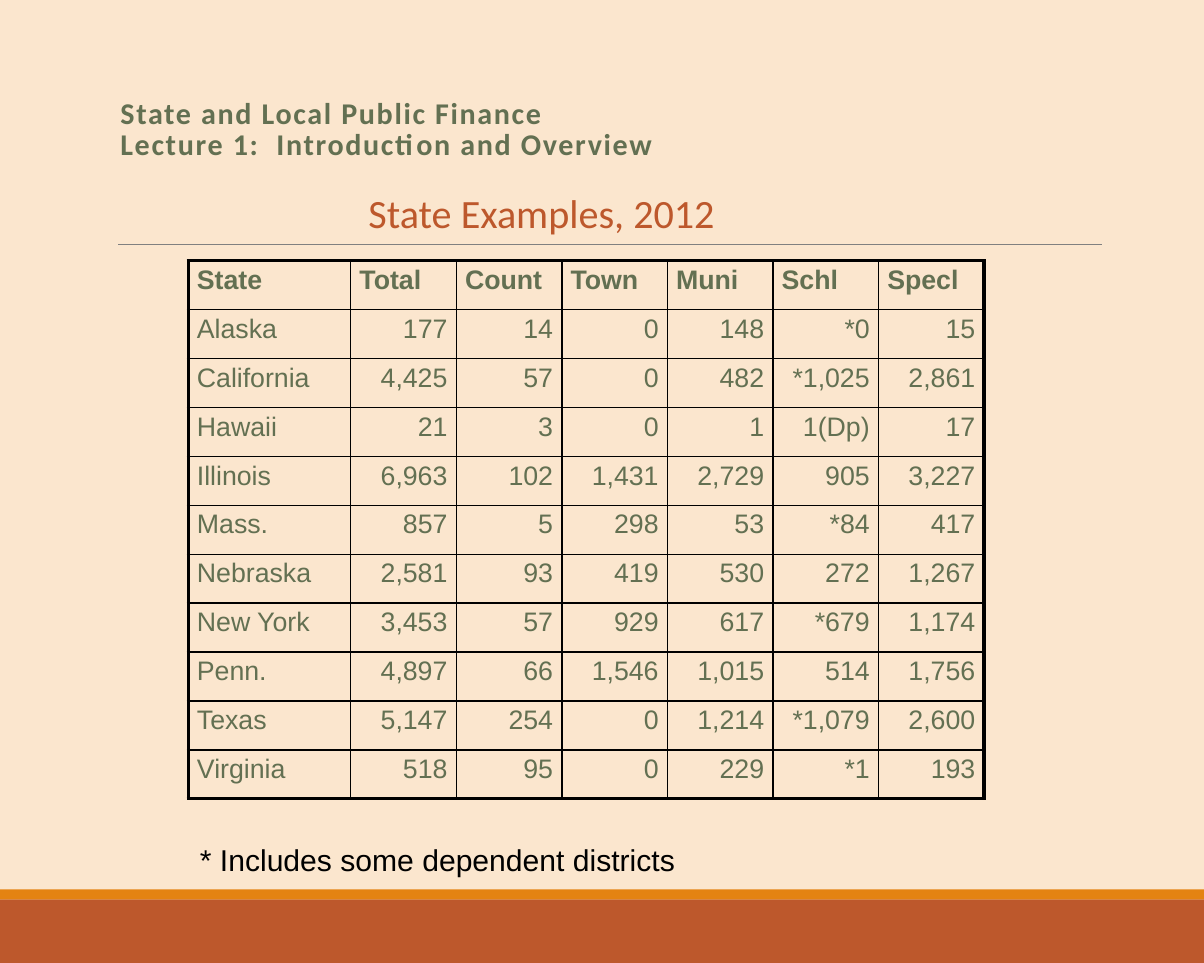
from copy import deepcopy

from pptx import Presentation
from pptx.dml.color import RGBColor
from pptx.enum.shapes import MSO_CONNECTOR, MSO_SHAPE
from pptx.enum.text import MSO_ANCHOR, MSO_AUTO_SIZE, PP_ALIGN
from pptx.oxml.ns import qn
from pptx.util import Pt
from lxml.etree import SubElement

COLORS = {
    "background": "FBE6CE", "rust": "BD582C", "orange": "E48312",
    "olive": "637052", "rule": "808080", "black": "000000",
}
WIDTH, HEIGHT = 720, 576

HEADER = ["State", "Total", "Count", "Town", "Muni", "Schl", "Specl"]
STATES = [
    ["Alaska", "177", "14", "0", "148", "*0", "15"],
    ["California", "4,425", "57", "0", "482", "*1,025", "2,861"],
    ["Hawaii", "21", "3", "0", "1", "1(Dp)", "17"],
    ["Illinois", "6,963", "102", "1,431", "2,729", "905", "3,227"],
    ["Mass.", "857", "5", "298", "53", "*84", "417"],
    ["Nebraska", "2,581", "93", "419", "530", "272", "1,267"],
    ["New York", "3,453", "57", "929", "617", "*679", "1,174"],
    ["Penn.", "4,897", "66", "1,546", "1,015", "514", "1,756"],
    ["Texas", "5,147", "254", "0", "1,214", "*1,079", "2,600"],
    ["Virginia", "518", "95", "0", "229", "*1", "193"],
]


def rgb(name):
    return RGBColor.from_string(COLORS[name])


def write(tf, text, font="Arial", size=18, color="black", bold=False,
          align=PP_ALIGN.LEFT, line_spacing=1.0, tracking=0):
    p = tf.paragraphs[0]
    p.text = text
    p.alignment = align
    p.line_spacing = line_spacing
    for r in p.runs:
        r.font.name = font
        r.font.size = Pt(size)
        r.font.bold = bold
        r.font.color.rgb = rgb(color)
        if tracking:
            r.font._element.set("spc", str(tracking * 100))
    # Line breaks take the size of the text around them
    for br in p._p.findall(qn("a:br")):
        br.insert(0, deepcopy(p.runs[0].font._element))


def add_bar(slide, x, y, w, h, color):
    sp = slide.shapes.add_shape(MSO_SHAPE.RECTANGLE, Pt(x), Pt(y), Pt(w), Pt(h))
    sp.shadow.inherit = False
    sp.fill.solid()
    sp.fill.fore_color.rgb = rgb(color)
    sp.line.fill.background()


def add_footer_band(slide, x, y, w, h, stripe=6):
    add_bar(slide, x, y + stripe, w, h - stripe, "rust")
    add_bar(slide, x, y, w, stripe, "orange")


def add_rule(slide, x, y, w):
    line = slide.shapes.add_connector(
        MSO_CONNECTOR.STRAIGHT, Pt(x), Pt(y), Pt(x + w), Pt(y))
    line.line.color.rgb = rgb("rule")
    line.line.width = Pt(0.5)
    SubElement(line._element.spPr, qn("a:effectLst"))


def add_title(slide, x, y, w, h, text):
    title = slide.shapes.title
    title.left, title.top, title.width, title.height = Pt(x), Pt(y), Pt(w), Pt(h)
    tf = title.text_frame
    tf.auto_size = MSO_AUTO_SIZE.NONE
    tf.vertical_anchor = MSO_ANCHOR.BOTTOM
    write(tf, text, font="Calibri", color="olive", bold=True,
          line_spacing=0.85, tracking=1)


def add_label(slide, x, y, w, h, text, inset=7.2, **fmt):
    tf = slide.shapes.add_textbox(Pt(x), Pt(y), Pt(w), Pt(h)).text_frame
    tf.word_wrap = True
    tf.margin_left = Pt(inset)
    write(tf, text, **fmt)


def set_borders(cell, widths):
    tc_pr = cell._tc.get_or_add_tcPr()
    for i, (side, width) in enumerate(widths.items()):
        ln = SubElement(tc_pr, qn(f"a:ln{side}"), w=str(Pt(width)))
        fill = SubElement(ln, qn("a:solidFill"))
        SubElement(fill, qn("a:srgbClr"), val=COLORS["black"])
        tc_pr.insert(i, ln)  # borders come before the cell fill


def add_state_table(slide, x, y, w, h, rows, first_col=97.2, thin=1, thick=2.25):
    n_rows, n_cols = len(rows), len(rows[0])
    table = slide.shapes.add_table(
        n_rows, n_cols, Pt(x), Pt(y), Pt(w), Pt(h)).table
    table.first_row = table.horz_banding = False
    for c, col in enumerate(table.columns):
        col.width = Pt(first_col if c == 0 else (w - first_col) / (n_cols - 1))
    for r, values in enumerate(rows):
        table.rows[r].height = Pt(h / n_rows)
        for c, value in enumerate(values):
            cell = table.cell(r, c)
            cell.margin_left = cell.margin_right = Pt(5.3)
            cell.margin_top = cell.margin_bottom = Pt(2.7)
            cell.fill.background()
            number = r > 0 and c > 0
            write(cell.text_frame, value, size=16, color="olive", bold=r == 0,
                  align=PP_ALIGN.RIGHT if number else PP_ALIGN.LEFT)
            set_borders(cell, {
                "L": thick if c == 0 else thin,
                "R": thick if c == n_cols - 1 else thin,
                "T": thick if r == 0 else thin,
                "B": thick if r == n_rows - 1 else thin,
            })


def main():
    prs = Presentation()
    prs.slide_width, prs.slide_height = Pt(WIDTH), Pt(HEIGHT)
    slide = prs.slides.add_slide(prs.slide_layouts[5])
    slide.background.fill.solid()
    slide.background.fill.fore_color.rgb = rgb("background")

    # Footer band and rule under the heading
    add_footer_band(slide, 0, 532, WIDTH, HEIGHT - 532)
    add_rule(slide, 70.6, 146.2, 588.2)

    # Title, table and its heading, footnote
    add_title(slide, 64.8, 23.8, 594, 76.3,
              "State and Local Public Finance\v"
              "Lecture 1:  Introduction and Overview")
    add_state_table(slide, 112.5, 156, 476, 321.8, [HEADER] + STATES)
    add_label(slide, 206, 112.3, 235, 33.1, "State Examples, 2012", inset=14.4,
              font="Calibri", size=24, color="rust", line_spacing=0.9)
    add_label(slide, 112.5, 500, 485, 29.2, "* Includes some dependent districts")

    prs.save("out.pptx")


if __name__ == "__main__":
    main()
